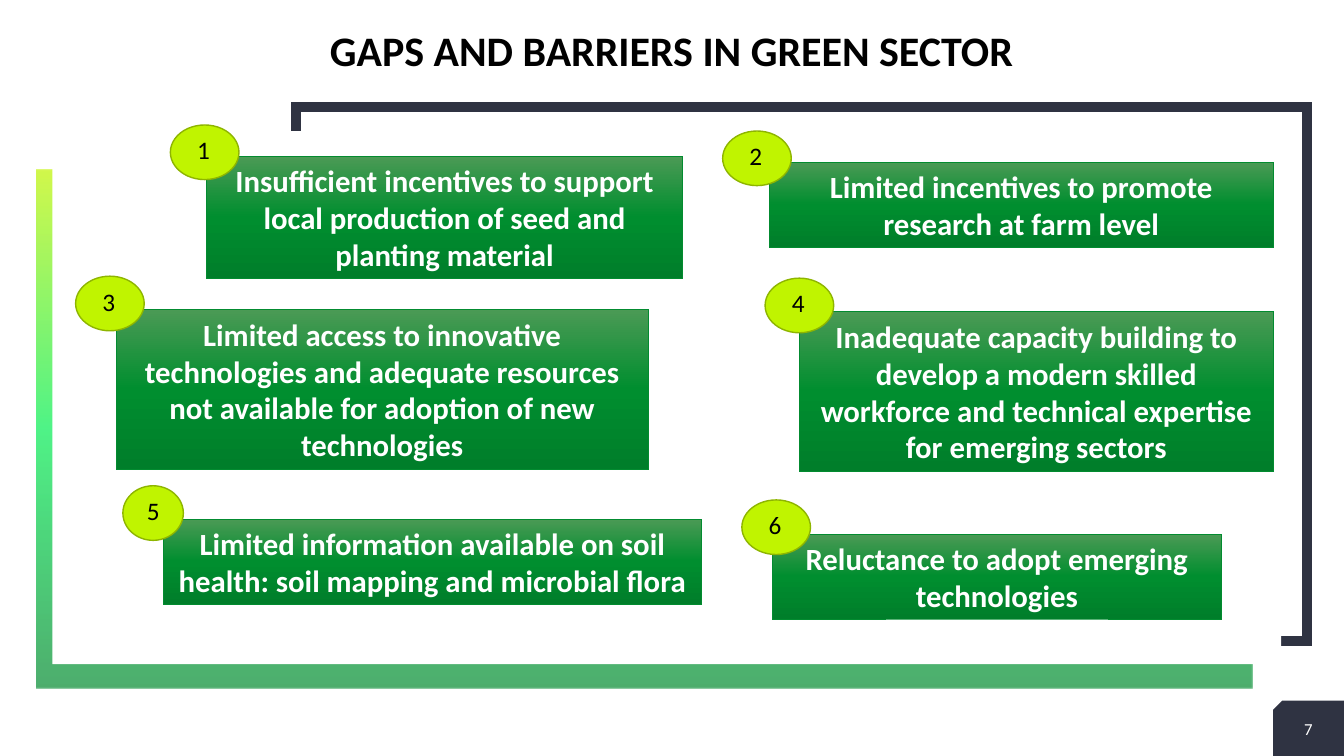
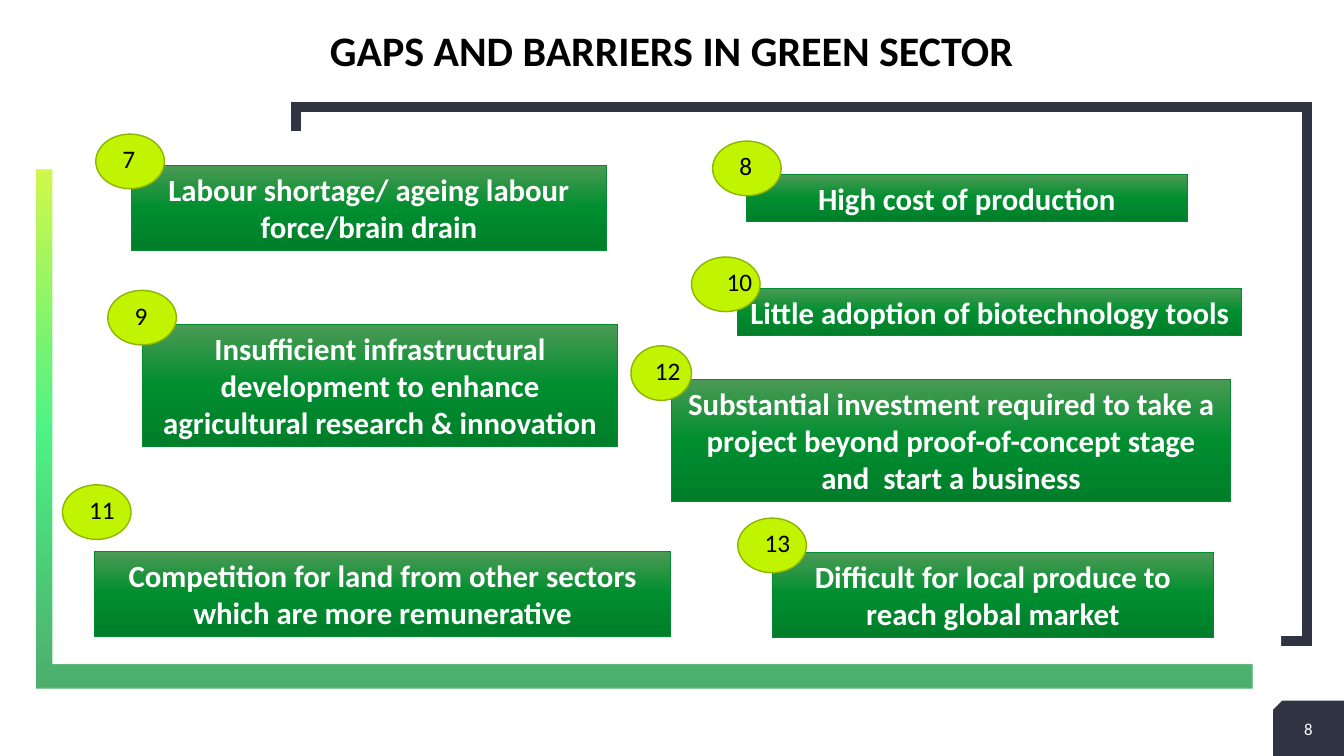
from lxml import etree
from pptx import Presentation
from pptx.dml.color import RGBColor
from pptx.enum import shapes, text
from pptx.oxml.ns import qn
from pptx.util import Pt

NAVY = RGBColor(0x2F, 0x33, 0x42)
GREEN = RGBColor(0x03, 0x8B, 0x30)
MINT = RGBColor(0x05, 0xEE, 0x55)
LIME = RGBColor(0xC0, 0xF4, 0x00)
OLIVE = RGBColor(0x8E, 0xB5, 0x00)
PANEL_GREENS = [RGBColor(0x4B, 0x9A, 0x55), RGBColor(0x00, 0x8E, 0x2F), RGBColor(0x00, 0x7E, 0x2A)]
WHITE = RGBColor(0xFF, 0xFF, 0xFF)
BLACK = RGBColor(0x00, 0x00, 0x00)

FONT = "Calibri"
TITLE = "GAPS AND BARRIERS IN GREEN SECTOR"
LINE_HEIGHT = 26.7
PANEL_PADDING = 7.2
BADGE_HEIGHT = 39

# Slide number, then its barriers: number, wording, panel left, top, width,
# text lines, badge left, top, width, and the inset of the number in the badge.
SLIDES = [
    (7, [
        (1, "Insufficient incentives to support local production of seed and planting material",
         147.6, 111.6, 339.8, 3, 121.7, 89.3, 49, 12),
        (2, "Limited incentives to promote research at farm level",
         549.4, 115.9, 360, 2, 516.2, 93.6, 49, 12),
        (3, "Limited access to innovative technologies and adequate resources "
            "not available for adoption of new technologies",
         82.8, 221, 380.2, 4, 54, 197.3, 49, 12),
        (4, "Inadequate capacity building to develop a modern skilled workforce "
            "and technical expertise for emerging sectors",
         571, 222.5, 338.4, 4, 546.5, 198.7, 49, 12),
        (5, "Limited information available on soil health: soil mapping and microbial flora",
         116.6, 370.8, 384.5, 2, 87.8, 347, 43.2, 10),
        (6, "Reluctance to adopt emerging technologies",
         551.5, 381.6, 321.1, 2, 529.9, 357.1, 49, 12),
    ]),
    (8, [
        (7, "Labour shortage/ ageing labour force/brain drain",
         93.6, 118.1, 339.8, 2, 68.4, 95.8, 49, 12),
        (8, "High cost of production",
         532.8, 124.6, 315.4, 1, 509, 100.8, 49, 12),
        (9, "Insufficient infrastructural development to enhance agricultural research & innovation",
         101.5, 231.8, 339.8, 3, 77, 207.4, 49, 12),
        (10, "Little adoption of biotechnology tools",
         527, 205.9, 360, 1, 493.9, 183.6, 49, 18),
        (11, "Competition for land from other sectors which are more remunerative",
         67.7, 393.8, 411.1, 2, 44.6, 346.3, 49, 12),
        (12, "Substantial investment required to take a project beyond "
             "proof-of-concept stage and  start a business",
         479.5, 270.7, 399.6, 3, 450.7, 247, 43.2, 10),
        (13, "Difficult for local produce to reach global market",
         551.5, 394.6, 315.4, 2, 527, 370.1, 49, 12),
    ]),
]


def add_block(parent, kind, box, fill=None, angle=0, alpha=100, line=None, line_width=0):
    """Add a preset shape; a list of colours as fill makes an even gradient."""
    block = parent.add_shape(kind, *[Pt(length) for length in box])
    block.shadow.inherit = False
    if fill is None:
        block.fill.background()
    elif isinstance(fill, list):
        block.fill.gradient()
        block.fill.gradient_angle = angle
        stops = block._element.spPr.find(".//" + qn("a:gsLst"))
        stops.clear()
        for index, color in enumerate(fill):
            position = str(index * 100000 // (len(fill) - 1))
            stop = etree.SubElement(stops, qn("a:gs"), pos=position)
            color_node = etree.SubElement(stop, qn("a:srgbClr"), val=str(color))
            if alpha < 100:
                etree.SubElement(color_node, qn("a:alpha"), val=str(alpha * 1000))
    else:
        block.fill.solid()
        block.fill.fore_color.rgb = fill
    if line is None:
        block.line.fill.background()
    else:
        block.line.color.rgb = line
        block.line.width = Pt(line_width)
        etree.SubElement(block.line._get_or_add_ln(), qn("a:miter"), lim="800000")
    return block


def write(holder, words, size, color, bold=False, align=text.PP_ALIGN.CENTER,
          anchor=text.MSO_ANCHOR.MIDDLE):
    frame = holder.text_frame
    frame.word_wrap = True
    frame.vertical_anchor = anchor
    paragraph = frame.paragraphs[0]
    paragraph.text = words
    paragraph.alignment = align
    font = paragraph.runs[0].font
    font.name, font.size, font.bold = FONT, Pt(size), bold
    font.color.rgb = color
    return paragraph


prs = Presentation()
prs.slide_width, prs.slide_height = Pt(960), Pt(540)
KIND = shapes.MSO_SHAPE

for page, barriers in SLIDES:
    slide = prs.slides.add_slide(prs.slide_layouts[6])
    canvas = slide.shapes

    # The white centre leaves only parts of both frames in view.
    corner = add_block(canvas, KIND.SNIP_1_RECTANGLE, (909.4, 500.4, 50.6, 39.6), NAVY)
    corner._element.spPr.xfrm.set("flipH", "1")
    add_block(canvas, KIND.RECTANGLE, (211.5, 76.3, 722.2, 381.6), line=NAVY, line_width=7)
    add_block(canvas, KIND.RECTANGLE, (26.3, 121.5, 868.5, 370.3),
              [GREEN, MINT, LIME], angle=90, alpha=70)
    add_block(canvas, KIND.RECTANGLE, (37.4, 93.6, 877.7, 380.9), WHITE)

    page_number = canvas.add_textbox(Pt(909.4), Pt(504.7), Pt(50.4), Pt(32.4))
    write(page_number, str(page), 12, WHITE)
    title = canvas.add_textbox(Pt(46.8), Pt(8.6), Pt(866.2), Pt(59))
    write(title, TITLE, 30, BLACK, bold=True).line_spacing = 0.9

    for (number, wording, left, top, width, lines,
         badge_left, badge_top, badge_width, inset) in barriers:
        barrier = canvas.add_group_shape().shapes
        height = PANEL_PADDING + lines * LINE_HEIGHT
        panel = add_block(barrier, KIND.RECTANGLE, (left, top, width, height),
                          PANEL_GREENS, angle=270, line=GREEN, line_width=0.5)
        write(panel, wording, 22, WHITE, bold=True)
        add_block(barrier, KIND.OVAL, (badge_left, badge_top, badge_width, BADGE_HEIGHT),
                  LIME, line=OLIVE, line_width=1)
        label = barrier.add_textbox(Pt(badge_left + inset), Pt(badge_top + 3.3), Pt(37), Pt(29))
        write(label, str(number), 18, BLACK, align=text.PP_ALIGN.LEFT,
              anchor=text.MSO_ANCHOR.TOP)

prs.save("out.pptx")
